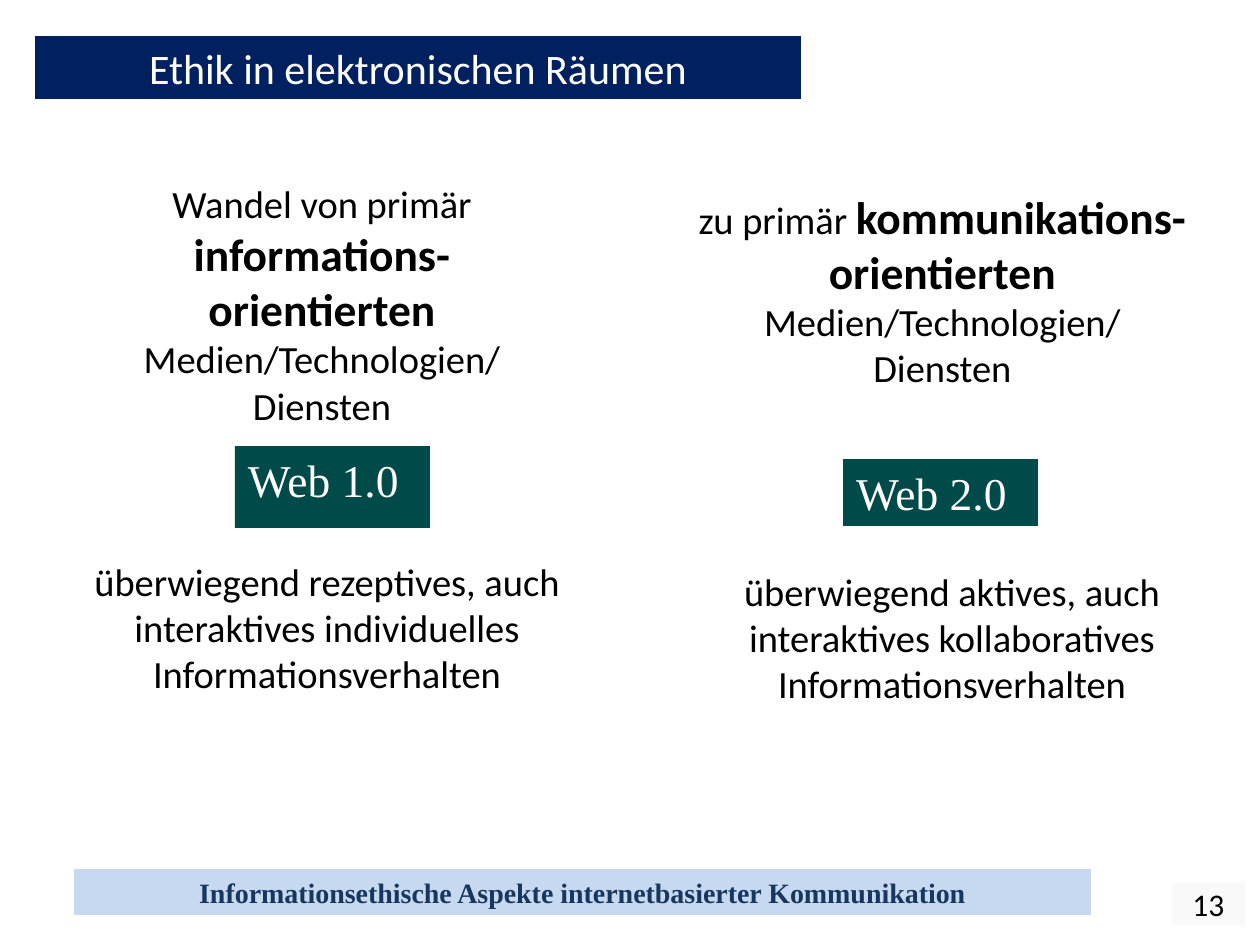
import dataclasses
import typing

import pptx
import pptx.dml.color
import pptx.enum.shapes
import pptx.enum.text
import pptx.util

PX = 914400 / 126  # EMU per px
SANS, SERIF = "Calibri", "Times New Roman"
ALIGN = pptx.enum.text.PP_ALIGN
ANCHOR = pptx.enum.text.MSO_ANCHOR


@dataclasses.dataclass
class Box:
    x: int
    y: int
    w: int
    h: int
    fill: str = ""


@dataclasses.dataclass
class Run:
    text: str
    size: int = 22
    bold: bool = False


def size(px: int) -> pptx.util.Emu:
    return pptx.util.Emu(round(px * PX))


def paint(color: typing.Any, code: str) -> None:
    color.rgb = pptx.dml.color.RGBColor.from_string(code)


def write(shape: typing.Any, lines: list[list[Run]], font: str = SANS,
          color: str = "000000", align: typing.Any = ALIGN.CENTER,
          anchor: typing.Any = ANCHOR.TOP, pad: tuple[int, int] = (13, 6)) -> None:
    frame = shape.text_frame
    frame.auto_size = pptx.enum.text.MSO_AUTO_SIZE.NONE
    frame.word_wrap = True
    frame.vertical_anchor = anchor
    frame.margin_left = frame.margin_right = size(pad[0])
    frame.margin_top = frame.margin_bottom = size(pad[1])
    for i, line in enumerate(lines):
        para = frame.add_paragraph() if i else frame.paragraphs[0]
        para.alignment = align
        for part in line:
            run = para.add_run()
            run.text = part.text
            run.font.name = font
            run.font.size = pptx.util.Pt(part.size)
            run.font.bold = part.bold
            paint(run.font.color, color)


def place(shape: typing.Any, box: Box) -> None:
    shape.left, shape.top = size(box.x), size(box.y)
    shape.width, shape.height = size(box.w), size(box.h)
    if box.fill:
        shape.fill.solid()
        paint(shape.fill.fore_color, box.fill)


def draw(slide: typing.Any, box: Box, lines: list[list[Run]],
         **style: typing.Any) -> None:
    if box.fill:
        kind = pptx.enum.shapes.MSO_SHAPE.RECTANGLE
        shape = slide.shapes.add_shape(kind, 0, 0, 0, 0)
        shape.shadow.inherit = False
        shape.line.fill.background()
    else:
        shape = slide.shapes.add_textbox(0, 0, 0, 0)
    place(shape, box)
    write(shape, lines, **style)


def main() -> None:
    deck = pptx.Presentation()
    deck.slide_width, deck.slide_height = size(1260), size(945)
    slide = deck.slides.add_slide(deck.slide_layouts[5])

    # Title bar
    title = slide.shapes.title
    place(title, Box(35, 36, 766, 63, "002060"))
    write(title, [[Run("Ethik in elektronischen Räumen", 24)]], color="FFFFFF")

    # Page number and footer
    draw(slide, Box(1172, 883, 73, 42, "F9F9F9"), [[Run("13", 18)]],
         anchor=ANCHOR.MIDDLE)
    footer = "Informationsethische Aspekte internetbasierter Kommunikation"
    draw(slide, Box(74, 869, 1017, 46, "C6D9F1"), [[Run(footer, 16, True)]],
         font=SERIF, color="17375E", anchor=ANCHOR.MIDDLE, pad=(0, 0))

    # Shift from information to communication
    media = [[Run("Medien/Technologien/")], [Run("Diensten")]]
    draw(slide, Box(49, 174, 546, 260),
         [[Run("Wandel von primär "), Run("informations-", 26, True)],
          [Run("orientierten", 26, True)], *media])
    draw(slide, Box(645, 183, 595, 214),
         [[Run("zu primär "), Run("kommunikations-orientierten", 26, True)],
          *media])

    # Web labels
    for name, x, y, h in [("Web 1.0", 235, 446, 82), ("Web 2.0", 843, 459, 67)]:
        draw(slide, Box(x, y, 195, h, "004A4A"), [[Run(name, 26)]],
             font=SERIF, color="FFFFFF", align=ALIGN.LEFT)

    # Resulting behaviour
    for x, y, trait in [(54, 552, "rezeptives, auch interaktives individuelles"),
                        (679, 562, "aktives, auch interaktives kollaboratives")]:
        draw(slide, Box(x, y, 546, 260),
             [[Run(f"überwiegend {trait} Informationsverhalten")]])

    deck.save("out.pptx")


if __name__ == "__main__":
    main()
